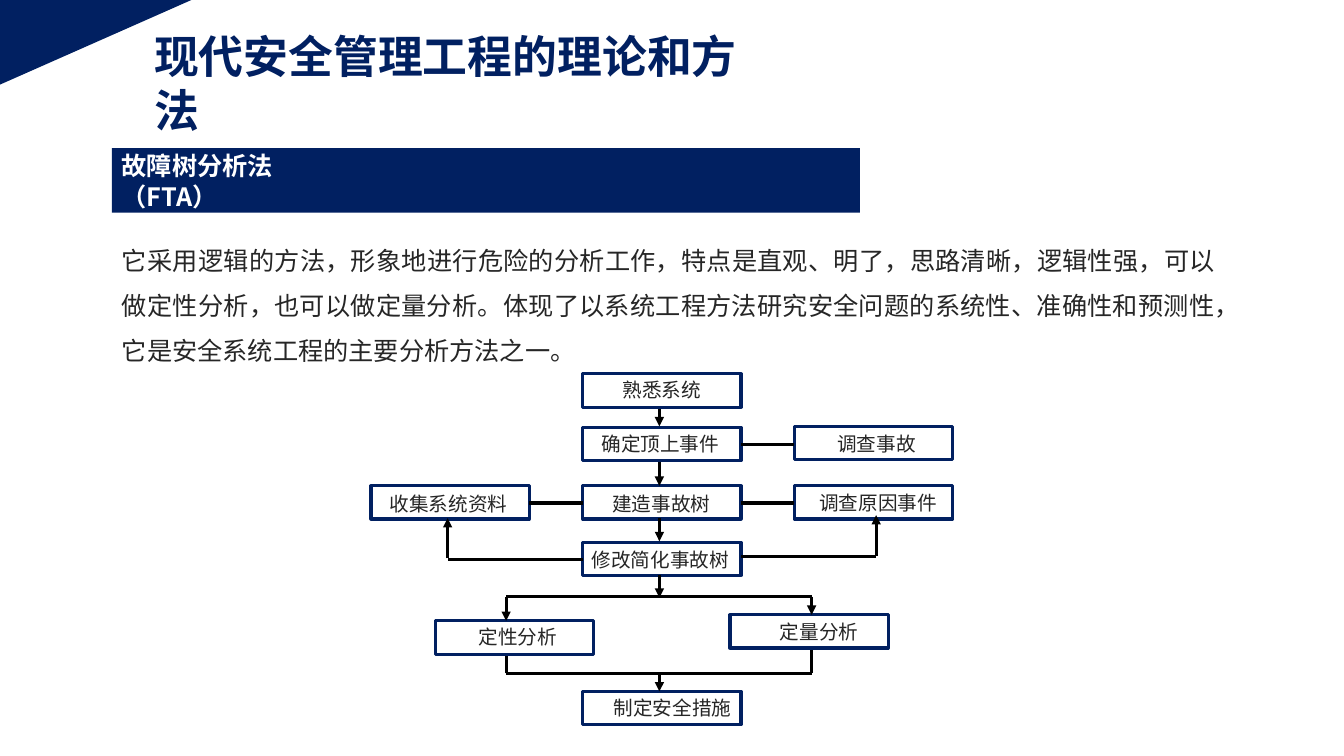
from pptx import Presentation
from pptx.dml.color import RGBColor
from pptx.enum.shapes import MSO_CONNECTOR, MSO_SHAPE
from pptx.enum.text import MSO_ANCHOR, PP_ALIGN
from pptx.oxml.ns import qn
from pptx.util import Pt
from lxml import etree

PX = 9144
STRAIGHT = MSO_CONNECTOR.STRAIGHT
RECTANGLE, TRIANGLE = MSO_SHAPE.RECTANGLE, MSO_SHAPE.RIGHT_TRIANGLE
LEFT, CENTER, JUSTIFY = PP_ALIGN.LEFT, PP_ALIGN.CENTER, PP_ALIGN.JUSTIFY
TOP, MIDDLE = MSO_ANCHOR.TOP, MSO_ANCHOR.MIDDLE

THEME = {
    "font": "Noto Sans CJK SC",
    "navy": RGBColor(0x01, 0x20, 0x61),
    "ink": RGBColor(0x26, 0x26, 0x26),
    "black": RGBColor(0, 0, 0),
    "white": RGBColor(0xFF, 0xFF, 0xFF),
    "title": Pt(32),
    "body": Pt(18),
    "label": Pt(14),
    "stroke": Pt(2.25),
}

prs = Presentation()
prs.slide_width, prs.slide_height = 1333 * PX, 750 * PX
slide = prs.slides.add_slide(prs.slide_layouts[6])


def add_block(geometry, left, top, width, height, filled):
    block = slide.shapes.add_shape(geometry, left * PX, top * PX, width * PX, height * PX)
    block.shadow.inherit = False
    if filled:
        block.fill.solid()
        block.fill.fore_color.rgb = THEME["navy"]
        block.line.fill.background()
    else:
        block.fill.background()
        block.line.color.rgb = THEME["navy"]
        block.line.width = THEME["stroke"]
    return block


def add_text(text, left, top, width, height, size, color, align=LEFT, bold=False, wrap=True, anchor=TOP):
    frame = slide.shapes.add_textbox(left * PX, top * PX, width * PX, height * PX).text_frame
    frame.text = text
    frame.word_wrap = wrap
    frame.vertical_anchor = anchor
    paragraph = frame.paragraphs[0]
    paragraph.alignment = align
    font = paragraph.runs[0].font
    font.name = THEME["font"]
    font.size = THEME[size]
    font.bold = bold
    font.color.rgb = THEME[color]
    etree.SubElement(paragraph.runs[0].font._element, qn("a:ea"), typeface=THEME["font"])
    return paragraph


corner = add_block(TRIANGLE, 0, 0, 190, 84, True)
corner.element.spPr.get_or_add_xfrm().set("flipV", "1")

description = add_text(
    "它采用逻辑的方法，形象地进行危险的分析工作，特点是直观、明了，思路清晰，逻辑性强，可以做定性分析，"
    "也可以做定量分析。体现了以系统工程方法研究安全问题的系统性、准确性和预测性，"
    "它是安全系统工程的主要分析方法之一。",
    111, 223, 1105, 141, "body", "ink", JUSTIFY)
description.line_spacing = 1.5

add_block(RECTANGLE, 111, 147, 742, 64, True)
add_text("故障树分析法（FTA）", 111, 160, 264, 39, "body", "white", bold=True, anchor=MIDDLE)

STEP_WIDTH, STEP_HEIGHT, LABEL_HEIGHT = 157, 33, 34
steps = [
    ("熟悉系统", 578, 371, 607, 370, 99),
    ("确定顶上事件", 578, 424, 586, 424, 138),
    ("修改简化事故树", 578, 538, 576, 539, 158),
    ("建造事故树", 578, 482, 597, 483, 118),
    ("调查事故", 788, 423, 820, 424, 99),
    ("调查原因事件", 788, 482, 802, 482, 138),
    ("收集系统资料", 368, 482, 376, 483, 138),
    ("定性分析", 432, 616, 464, 615, 99),
    ("定量分析", 724, 610, 763, 610, 99),
    ("制定安全措施", 578, 686, 598, 685, 138),
]
for label, left, top, *_ in steps:
    add_block(RECTANGLE, left, top, STEP_WIDTH, STEP_HEIGHT, False)

SPINE, QUALITATIVE, QUANTITATIVE = 654, 502, 805
SPLIT, MERGE = 592, 668
arrows = [
    (SPINE, 406, SPINE, 423),
    (SPINE, 458, SPINE, 482),
    (SPINE, 514, SPINE, 537),
    (444, 554, 444, 514),
    (869, 552, 869, 511),
    (QUALITATIVE, SPLIT, QUALITATIVE, 616),
    (QUANTITATIVE, SPLIT, QUANTITATIVE, 610),
    (SPINE, 570, SPINE, 593),
    (SPINE, MERGE, SPINE, 686),
]
links = [
    (525, 499, 578, 499),
    (735, 441, 788, 441),
    (735, 499, 788, 499),
    (735, 552, 869, 552),
    (578, 555, 444, 555),
    (QUALITATIVE, SPLIT, QUANTITATIVE, SPLIT),
    (QUALITATIVE, MERGE, QUANTITATIVE, MERGE),
    (QUALITATIVE, MERGE, QUALITATIVE, 651),
    (QUANTITATIVE, MERGE, QUANTITATIVE, 645),
]
for route in arrows + links:
    flow = slide.shapes.add_connector(STRAIGHT, *(point * PX for point in route))
    flow.line.color.rgb = THEME["black"]
    flow.line.width = THEME["stroke"]
    if route in arrows:
        etree.SubElement(flow.line._get_or_add_ln(), qn("a:tailEnd"), type="triangle")
    etree.SubElement(flow.element.spPr, qn("a:effectLst"))

for label, _, _, left, top, width in steps:
    add_text(label, left, top, width, LABEL_HEIGHT, "label", "ink", CENTER, wrap=False)

add_text("现代安全管理工程的理论和方法", 143, 24, 640, 63, "title", "navy", bold=True)

prs.save("out.pptx")
